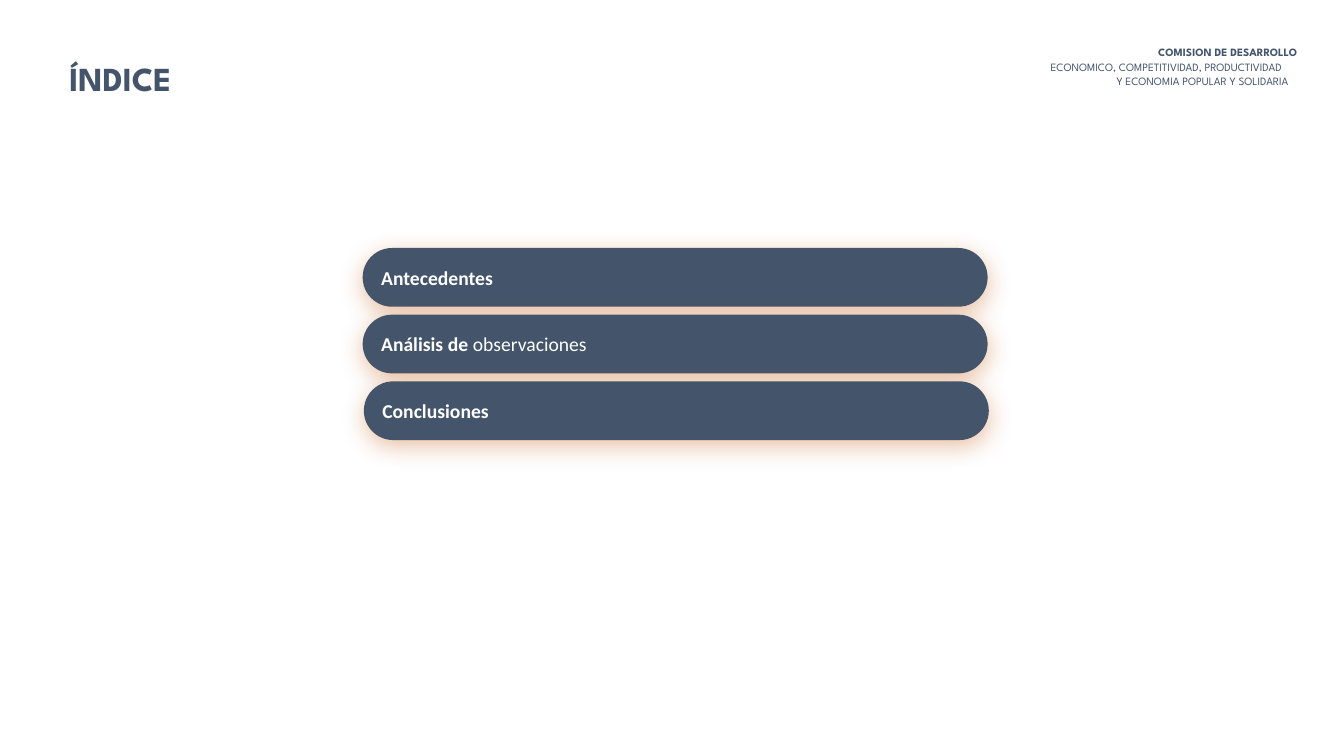
import pptx
import pptx.dml.color
import pptx.enum.shapes
import pptx.enum.text
import pptx.oxml
import pptx.oxml.ns
import pptx.util
from pptx.util import Cm

SLATE = pptx.dml.color.RGBColor(0x44, 0x54, 0x6A)
WHITE = pptx.dml.color.RGBColor(0xFF, 0xFF, 0xFF)
RUST = pptx.dml.color.RGBColor(0xC5, 0x5A, 0x11)
HEADING_FONT = "League Spartan"
BODY_FONT = "Calibri"

COMMISSION_RIGHT = 33.08
COMMISSION_LINES = [
    ("COMISION DE DESARROLLO", 4.27, True),
    ("ECONOMICO, COMPETITIVIDAD, PRODUCTIVIDAD", 7.37, False),
    ("Y ECONOMIA POPULAR Y SOLIDARIA", 5.54, False),
]
TOPICS = [
    (9.14, [("Antecedentes", True)]),
    (9.14, [("Análisis de ", True), ("observaciones", False)]),
    (9.17, [("Conclusiones", True)]),
]


def format_span(span, font_name, size, colour, bold):
    span.font.name = font_name
    span.font.size = pptx.util.Pt(size)
    span.font.color.rgb = colour
    span.font.bold = bold


def add_label(page, text, left, top, width, height, size, bold):
    box = page.shapes.add_textbox(Cm(left), Cm(top), Cm(width), Cm(height))
    box.text_frame.text = text
    para = box.text_frame.paragraphs[0]
    format_span(para.runs[0], HEADING_FONT, size, SLATE, bold)
    return box


def add_title(page, text):
    box = add_label(page, text, 1.5, 0.84, 8.97, 2.24, 24, True)
    box.text_frame.word_wrap = True
    box.text_frame.vertical_anchor = pptx.enum.text.MSO_ANCHOR.MIDDLE


def add_commission_line(page, text, top, width, bold):
    left = COMMISSION_RIGHT - width
    box = add_label(page, text, left, top, width, 0.61, 8, bold)
    box.text_frame.word_wrap = False
    box.text_frame.auto_size = pptx.enum.text.MSO_AUTO_SIZE.SHAPE_TO_FIT_TEXT
    box.text_frame.paragraphs[0].alignment = pptx.enum.text.PP_ALIGN.CENTER


def add_glow_shadow(shape):
    shape.shadow.inherit = False
    effects = shape._element.spPr.find(pptx.oxml.ns.qn("a:effectLst"))
    effects.append(pptx.oxml.parse_xml(
        f'<a:outerShdw {pptx.oxml.ns.nsdecls("a")} blurRad="{pptx.util.Pt(17)}" '
        f'dist="{pptx.util.Pt(4)}" dir="5400000" algn="t" rotWithShape="0">'
        f'<a:srgbClr val="{RUST}"><a:alpha val="37000"/></a:srgbClr></a:outerShdw>'
    ))


def add_topic(page, left, top, pieces):
    pill = page.shapes.add_shape(
        pptx.enum.shapes.MSO_SHAPE.ROUNDED_RECTANGLE,
        Cm(left), Cm(top), Cm(15.75), Cm(1.48),
    )
    pill.adjustments[0] = 0.5
    pill.fill.solid()
    pill.fill.fore_color.rgb = SLATE
    pill.line.fill.background()
    add_glow_shadow(pill)
    pill.text_frame.vertical_anchor = pptx.enum.text.MSO_ANCHOR.MIDDLE
    para = pill.text_frame.paragraphs[0]
    para.alignment = pptx.enum.text.PP_ALIGN.LEFT
    for text, bold in pieces:
        span = para.add_run()
        span.text = text
        format_span(span, BODY_FONT, 14, WHITE, bold)


def main():
    deck = pptx.Presentation()
    deck.slide_width = Cm(33.87)
    deck.slide_height = Cm(19.05)
    page = deck.slides.add_slide(deck.slide_layouts[6])
    for index, (text, width, bold) in enumerate(COMMISSION_LINES):
        add_commission_line(page, text, 1.02 + 0.37 * index, width, bold)
    add_title(page, "ÍNDICE")
    for index, (left, pieces) in enumerate(TOPICS):
        add_topic(page, left, 6.25 + 1.68 * index, pieces)
    deck.save("out.pptx")


if __name__ == "__main__":
    main()
